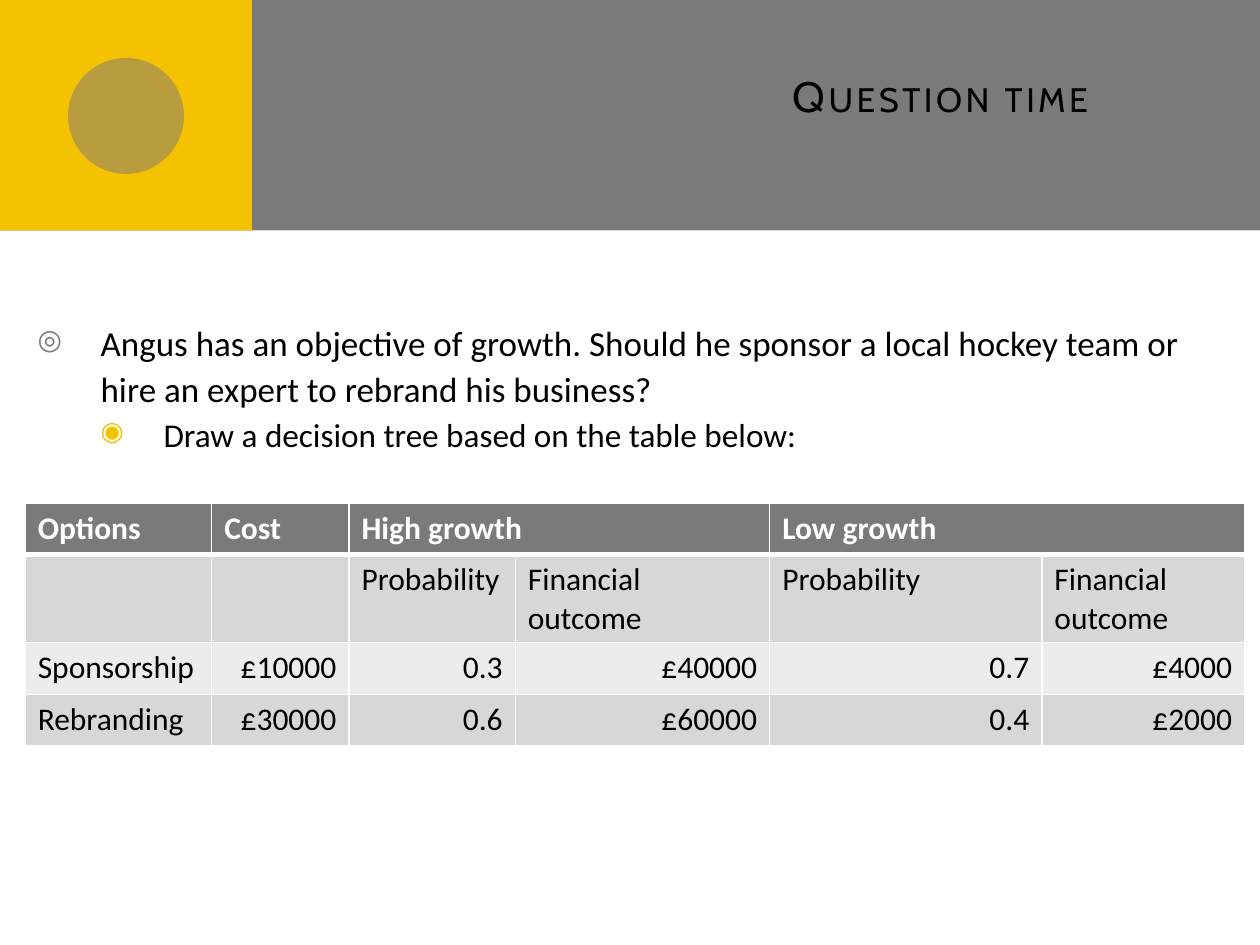
from lxml import etree
from pptx import Presentation
from pptx.dml.color import RGBColor
from pptx.enum import shapes, text
from pptx.oxml import ns
from pptx.util import Inches, Pt

GREY = RGBColor(0x7A, 0x7A, 0x7A)
YELLOW = RGBColor(0xF5, 0xC2, 0x01)
DARK_BAND = RGBColor(0xD7, 0xD7, 0xD7)
LIGHT_BAND = RGBColor(0xEC, 0xEC, 0xEC)
BLACK = RGBColor(0, 0, 0)
WHITE = RGBColor(0xFF, 0xFF, 0xFF)

COLUMN_WIDTHS = [1.48, 1.09, 1.32, 2.02, 2.16, 1.61]
ROW_HEIGHT = 0.41
ROWS = [
    ["Options", "Cost", "High growth", "", "Low growth", ""],
    ["", "", "Probability", "Financial outcome", "Probability", "Financial outcome"],
    ["Sponsorship", "£10000", "0.3", "£40000", "0.7", "£4000"],
    ["Rebranding", "£30000", "0.6", "£60000", "0.4", "£2000"],
]
ROW_FILLS = [GREY, DARK_BAND, LIGHT_BAND, DARK_BAND]


def add_xml(parent, tag, **attributes):
    """Append a DrawingML element and return it."""
    return etree.SubElement(parent, ns.qn(tag), attributes)


def add_block(page, kind, left, top, width, height, color, opacity=None):
    """Add a filled shape without outline, optionally translucent."""
    block = page.shapes.add_shape(
        kind, Inches(left), Inches(top), Inches(width), Inches(height))
    block.shadow.inherit = False
    block.fill.solid()
    block.fill.fore_color.rgb = color
    block.line.fill.background()
    if opacity is not None:
        color_xml = block._element.spPr.find(".//" + ns.qn("a:srgbClr"))
        add_xml(color_xml, "a:alpha", val=str(opacity * 1000))


def add_text_box(page, left, top, width, height):
    """Add a wrapping text box and return its frame."""
    box = page.shapes.add_textbox(
        Inches(left), Inches(top), Inches(width), Inches(height))
    box.text_frame.word_wrap = True
    return box.text_frame


def style_font(para, name, size, color, bold=False):
    """Set the font of a whole paragraph."""
    para.font.name = name
    para.font.size = Pt(size)
    para.font.color.rgb = color
    para.font.bold = bold


def add_title(page, words):
    """Add the right-aligned small-caps title."""
    frame = add_text_box(page, 2.64, 0.44, 6.83, 1.25)
    frame.vertical_anchor = text.MSO_ANCHOR.MIDDLE
    frame.margin_right = Inches(0.47)
    frame.margin_bottom = Inches(0.66)
    para = frame.paragraphs[0]
    para.alignment = text.PP_ALIGN.RIGHT
    span = para.add_run()
    span.text = words
    span.font.name = "Cabin"
    span.font.size = Pt(24.3)
    span.font.color.rgb = BLACK
    properties = span._r.get_or_add_rPr()
    properties.set("cap", "small")
    properties.set("spc", "200")


def set_bullet(para, level, symbol, color):
    """Give a paragraph its level, hanging indent and coloured bullet."""
    para.level = level
    properties = para._p.get_or_add_pPr()
    properties.set("marL", str(Inches(0.5 * (level + 1))))
    properties.set("indent", str(-Inches(0.5)))
    bullet_color = add_xml(properties, "a:buClr")
    add_xml(bullet_color, "a:srgbClr", val=str(color))
    add_xml(properties, "a:buSzPct", val="80000")
    add_xml(properties, "a:buChar", char=symbol)


def add_body(page, items):
    """Add the bulleted question, one level deeper per item."""
    frame = add_text_box(page, 0.2, 2.1, 9.61, 5.28)
    frame.margin_top = Inches(0.42)
    for level, (words, size, symbol, color) in enumerate(items):
        para = frame.add_paragraph() if level else frame.paragraphs[0]
        para.text = words
        para.line_spacing = 1.1
        set_bullet(para, level, symbol, color)
        style_font(para, "Calibri", size, BLACK)


def set_borders(cell, bottom):
    """Draw white cell borders with a bottom line of the given width."""
    properties = cell._tc.get_or_add_tcPr()
    for side, width in (("L", 1), ("R", 1), ("T", 1), ("B", bottom)):
        line = add_xml(properties, "a:ln" + side, w=str(Pt(width)))
        fill = add_xml(line, "a:solidFill")
        add_xml(fill, "a:srgbClr", val=str(WHITE))


def add_options_table(page):
    """Add the table of options, costs and growth outcomes."""
    table = page.shapes.add_table(
        len(ROWS), len(COLUMN_WIDTHS), Inches(0.2), Inches(3.99),
        Inches(sum(COLUMN_WIDTHS)), Inches(ROW_HEIGHT * len(ROWS))).table
    for column, width in zip(table.columns, COLUMN_WIDTHS):
        column.width = Inches(width)
    for first in (2, 4):
        table.cell(0, first).merge(table.cell(0, first + 1))
    for r, (values, fill) in enumerate(zip(ROWS, ROW_FILLS)):
        table.rows[r].height = Inches(ROW_HEIGHT)
        header = r == 0
        for c, value in enumerate(values):
            cell = table.cell(r, c)
            set_borders(cell, 3 if header else 1)
            cell.fill.solid()
            cell.fill.fore_color.rgb = fill
            para = cell.text_frame.paragraphs[0]
            if value:
                para.text = value
            style_font(para, "Calibri", 18, WHITE if header else BLACK, header)
            if r > 1 and c > 0:
                para.alignment = text.PP_ALIGN.RIGHT


def main():
    """Build and save the slide."""
    deck = Presentation()
    deck.slide_width, deck.slide_height = Inches(10), Inches(7.5)
    page = deck.slides.add_slide(deck.slide_layouts[6])
    kinds = shapes.MSO_SHAPE
    add_block(page, kinds.RECTANGLE, 0, 0, 10, 1.83, GREY)
    add_block(page, kinds.RECTANGLE, 0, 0, 2, 1.83, YELLOW)
    add_block(page, kinds.OVAL, 0.54, 0.46, 0.92, 0.92, GREY, opacity=50)
    add_title(page, "Question time")
    add_body(page, [
        ("Angus has an objective of growth. Should he sponsor a local hockey "
         "team or hire an expert to rebrand his business?", 20, "◎", GREY),
        ("Draw a decision tree based on the table below:", 19, "◉", YELLOW),
    ])
    add_options_table(page)
    deck.save("out.pptx")


if __name__ == "__main__":
    main()
